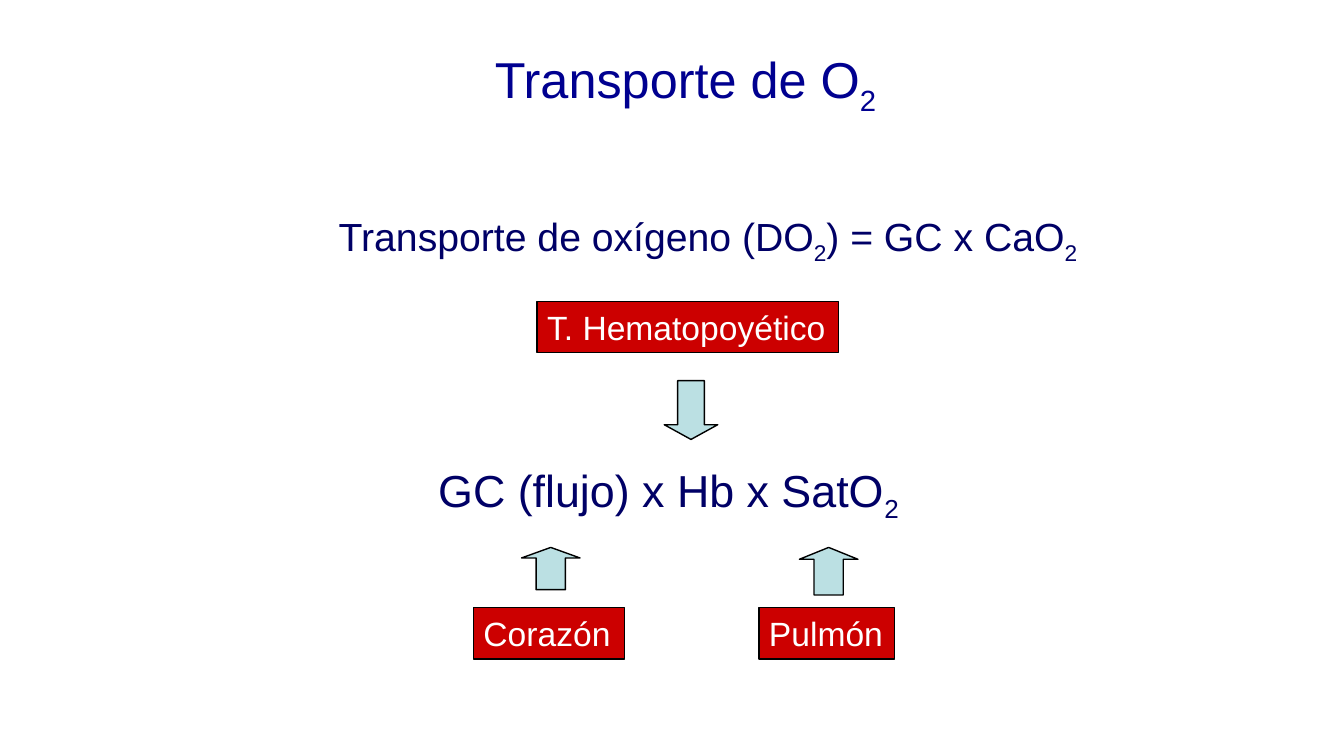
from dataclasses import dataclass

from pptx import Presentation
from pptx.dml.color import RGBColor
from pptx.enum.shapes import MSO_SHAPE
from pptx.enum.text import MSO_ANCHOR, PP_ALIGN
from pptx.util import Pt

COLORS = {
    "title": "000090",
    "formula": "000066",
    "organ": "CC0000",
    "organ_text": "FFFFFF",
    "arrow": "BBE0E3",
    "outline": "000000",
}
SUBSCRIPT = "-25000"


@dataclass(frozen=True)
class Box:
    left: float
    top: float
    width: float
    height: float

    def lengths(self) -> tuple:
        return Pt(self.left), Pt(self.top), Pt(self.width), Pt(self.height)


@dataclass(frozen=True)
class Formula:
    box: Box
    pieces: tuple[str, ...]
    size: float
    color: str = "formula"
    align: PP_ALIGN = PP_ALIGN.LEFT


@dataclass(frozen=True)
class Organ:
    box: Box
    name: str
    align: PP_ALIGN = PP_ALIGN.LEFT


@dataclass(frozen=True)
class Arrow:
    box: Box
    kind: MSO_SHAPE
    head: float


FORMULAS = (
    Formula(Box(139.7, 34.5, 700, 44), ("Transporte de O", "2"), 36, "title", PP_ALIGN.CENTER),
    Formula(
        Box(242, 152, 560, 36),
        ("Transporte de oxígeno (DO", "2", ") = GC x CaO", "2"),
        28,
    ),
    Formula(Box(313, 330.3, 360, 40), ("GC (flujo) x Hb x SatO", "2"), 32),
)
ORGANS = (
    Organ(Box(338.3, 434, 108, 36.6), "Corazón"),
    Organ(Box(383.7, 215.3, 215.4, 36.6), "T. Hematopoyético", PP_ALIGN.JUSTIFY),
    Organ(Box(542.2, 434, 96.6, 36.6), "Pulmón"),
)
ARROWS = (
    Arrow(Box(474.5, 271.9, 38.2, 42), MSO_SHAPE.DOWN_ARROW, 0.275),
    Arrow(Box(571, 391, 41.8, 34), MSO_SHAPE.UP_ARROW, 0.25),
    Arrow(Box(372.5, 391, 41.8, 30.2), MSO_SHAPE.UP_ARROW, 0.25),
)


def set_all(target, values: dict) -> None:
    for name, value in values.items():
        setattr(target, name, value)


def add_run(paragraph, text: str, size: float, color: str):
    run = paragraph.add_run()
    run.text = text
    set_all(run.font, {"name": "Arial", "size": Pt(size)})
    run.font.color.rgb = RGBColor.from_string(COLORS[color])
    return run


def add_formula(slide, formula: Formula) -> None:
    """Add a line of text whose every second piece is a subscript."""
    frame = slide.shapes.add_textbox(*formula.box.lengths()).text_frame
    margins = ("margin_left", "margin_top", "margin_right", "margin_bottom")
    set_all(frame, {"word_wrap": True, **dict.fromkeys(margins, 0)})
    paragraph = frame.paragraphs[0]
    paragraph.alignment = formula.align
    for index, piece in enumerate(formula.pieces):
        run = add_run(paragraph, piece, formula.size, formula.color)
        if index % 2:
            run._r.get_or_add_rPr().set("baseline", SUBSCRIPT)


def add_outlined_shape(slide, kind: MSO_SHAPE, box: Box, fill: str):
    shape = slide.shapes.add_shape(kind, *box.lengths())
    shape.shadow.inherit = False
    shape.fill.solid()
    shape.fill.fore_color.rgb = RGBColor.from_string(COLORS[fill])
    shape.line.color.rgb = RGBColor.from_string(COLORS["outline"])
    shape.line.width = Pt(1)
    return shape


def add_organ(slide, organ: Organ) -> None:
    frame = add_outlined_shape(slide, MSO_SHAPE.RECTANGLE, organ.box, "organ").text_frame
    set_all(frame, {"word_wrap": True, "vertical_anchor": MSO_ANCHOR.MIDDLE})
    paragraph = frame.paragraphs[0]
    paragraph.alignment = organ.align
    add_run(paragraph, organ.name, 24, "organ_text")


def add_arrow(slide, arrow: Arrow) -> None:
    shape = add_outlined_shape(slide, arrow.kind, arrow.box, "arrow")
    shape.adjustments[0] = 0.5
    shape.adjustments[1] = arrow.head


def main() -> None:
    presentation = Presentation()
    set_all(presentation, {"slide_width": Pt(960), "slide_height": Pt(540)})
    slide = presentation.slides.add_slide(presentation.slide_layouts[6])
    for formula in FORMULAS:
        add_formula(slide, formula)
    for organ in ORGANS:
        add_organ(slide, organ)
    for arrow in ARROWS:
        add_arrow(slide, arrow)
    presentation.save("out.pptx")


if __name__ == "__main__":
    main()
